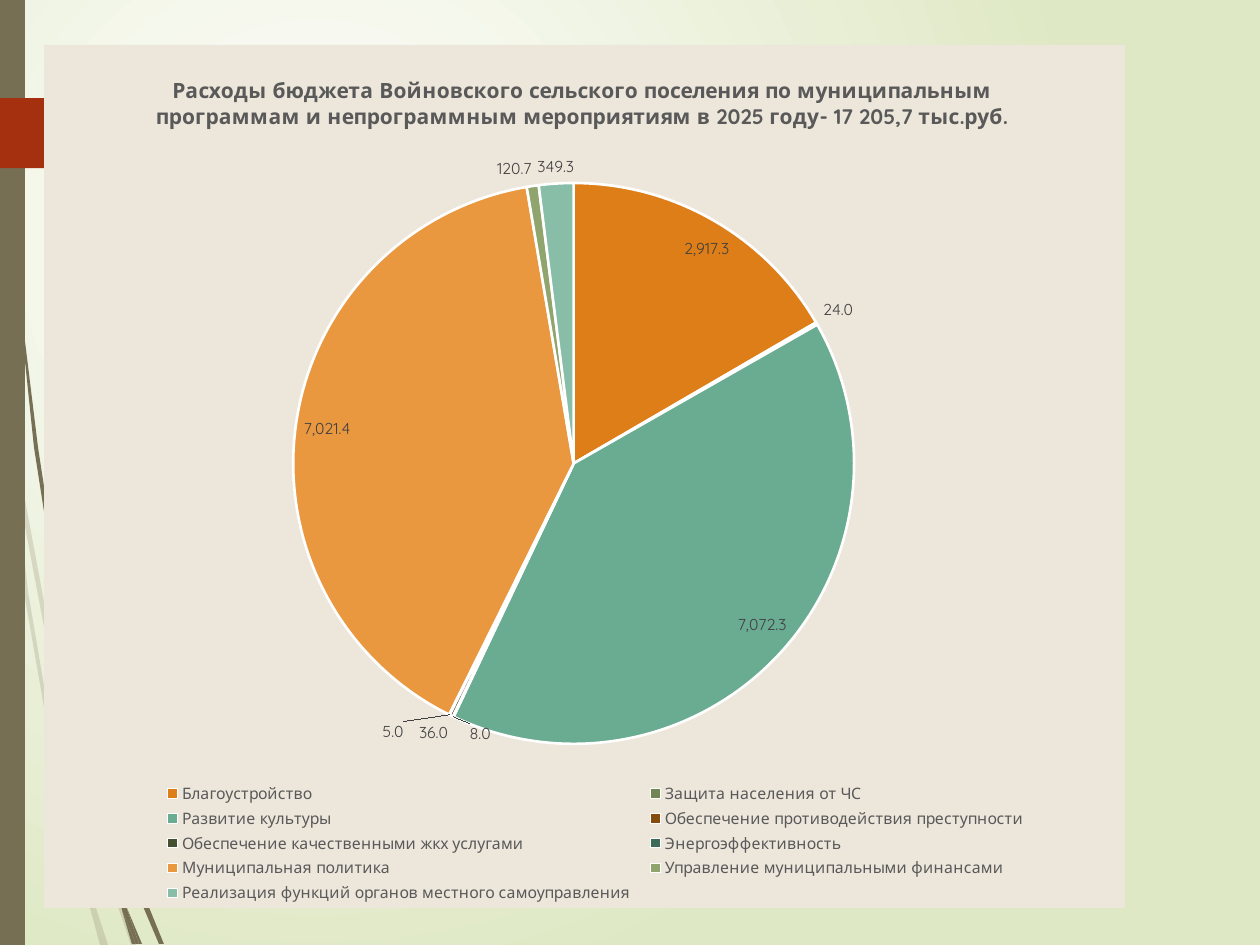
from typing import NamedTuple

import pptx
import pptx.chart.data
import pptx.dml.color
import pptx.enum.chart
import pptx.enum.shapes
import pptx.oxml
import pptx.oxml.ns
import pptx.util

EMU_PER_PX = 914400 // 126
SLIDE_WIDTH, SLIDE_HEIGHT = 1260, 945
FONT = "Quicksand"
BROWN, RED, BEIGE, GREY = "766F54", "A53010", "EDE6DB", "595959"
TITLE = ("Расходы бюджета Войновского сельского поселения по муниципальным "
         "программам и непрограммным мероприятиям в 2025 году- 17 205,7 тыс.руб.")


class Program(NamedTuple):
    name: str
    amount: float
    color: str


class Outline(NamedTuple):
    points: list[tuple[int, int]]
    color: str = BROWN
    opacity: int = 100


PROGRAMS = [
    Program("Благоустройство", 2917.3, "DE7E18"),
    Program("Защита населения от ЧС", 24, "728653"),
    Program("Развитие культуры", 7072.3, "6AAC91"),
    Program("Обеспечение противодействия преступности", 8, "854C0E"),
    Program("Обеспечение качественными жкх услугами", 36, "445032"),
    Program("Энергоэффективность", 5, "3C6B58"),
    Program("Муниципальная политика", 7021.4, "EA9840"),
    Program("Управление муниципальными финансами", 120.7, "90A56E"),
    Program("Реализация функций органов местного самоуправления", 349.3, "88BDA7"),
]

PALE_WISPS = [
    [(50, 658), (74, 755), (74, 738), (54, 655), (13, 435), (15, 474)],
    [(81, 765), (77, 751), (77, 769), (107, 874), (131, 945), (136, 945), (111, 872)],
    [(105, 945), (108, 945), (92, 896)],
    [(81, 861), (60, 780), (28, 591), (15, 474), (10, 441), (24, 592), (57, 782),
     (81, 873), (88, 900), (87, 891)],
    [(88, 900), (100, 945), (103, 945)],
    [(84, 872), (82, 861), (87, 891), (88, 900), (103, 945), (105, 945), (92, 896)],
]
DARK_WISPS = [
    [(6, 139), (18, 294), (34, 447), (58, 601), (59, 606), (57, 571), (38, 447),
     (19, 292), (8, 137), (5, 60), (4, 0), (3, 0), (4, 60)],
    [(118, 818), (115, 808), (115, 827), (137, 892), (159, 944), (164, 944), (142, 890)],
    [(139, 944), (142, 944), (126, 906)],
    [(122, 910), (132, 944), (136, 944)],
    [(121, 890), (115, 871), (121, 903), (122, 910), (136, 944), (139, 944), (126, 906)],
]
RIBBON = [(0, 98), (153, 98), (188, 133), (153, 168), (0, 168)]


def px(length: int) -> int:
    return pptx.util.Emu(length * EMU_PER_PX)


def rgb(color: str) -> pptx.dml.color.RGBColor:
    return pptx.dml.color.RGBColor.from_string(color)


def xml(text: str):
    """Parse an element whose first tag holds the place for namespaces as {ns}."""
    return pptx.oxml.parse_xml(text.replace("{ns}", pptx.oxml.ns.nsdecls("a", "c")))


def fill_shape(shape, color: str) -> None:
    shape.shadow.inherit = False
    shape.fill.solid()
    shape.fill.fore_color.rgb = rgb(color)
    shape.line.fill.background()


def style_font(font, size: float, color: str, bold: bool = False) -> None:
    font.name, font.size, font.bold = FONT, pptx.util.Pt(size), bold
    font.color.rgb = rgb(color)


def paint_background(slide) -> None:
    fill = slide.background.fill
    fill.gradient()
    for stop, color, position in zip(fill.gradient_stops, ("FFFFFF", "DFE8C4"), (0, 1)):
        stop.color.rgb = rgb(color)
        stop.position = position
    linear = slide.element.xpath("./p:cSld/p:bg//a:lin")[0]
    linear.getparent().replace(linear, xml(
        '<a:path {ns} path="circle"><a:fillToRect l="50000" t="50000" '
        'r="100000" b="100000"/></a:path>'))


def draw_outline(slide, outline: Outline) -> None:
    builder = slide.shapes.build_freeform(*outline.points[0], scale=EMU_PER_PX)
    builder.add_line_segments(outline.points[1:], close=True)
    shape = builder.convert_to_shape()
    fill_shape(shape, outline.color)
    if outline.opacity < 100:
        color = shape.element.xpath("./p:spPr/a:solidFill/a:srgbClr")[0]
        color.append(xml(f'<a:alpha {{ns}} val="{outline.opacity * 1000}"/>'))


def place_part(element, successors: tuple[str, ...], **fractions: float) -> None:
    """Fix a chart part at fractions of the chart area."""
    for old_layout in element.findall(pptx.oxml.ns.qn("c:layout")):
        element.remove(old_layout)
    modes = "".join(f'<c:{side}Mode val="edge"/>' for side in "xy")
    values = "".join(f'<c:{key} val="{value}"/>' for key, value in fractions.items())
    layout = xml(f"<c:layout {{ns}}><c:manualLayout>{modes}{values}"
                 "</c:manualLayout></c:layout>")
    element.insert_element_before(layout, *successors)


def style_pie(plot) -> None:
    plot.vary_by_categories = True
    for index, program in enumerate(PROGRAMS):
        point_format = plot.series[0].points[index].format
        point_format.fill.solid()
        point_format.fill.fore_color.rgb = rgb(program.color)
        point_format.line.color.rgb = rgb("FFFFFF")
        point_format.line.width = pptx.util.Pt(1.5)
    labels = plot.series[0].data_labels
    labels.show_value = True
    labels.number_format = "#,##0.0"
    labels.number_format_is_linked = False
    labels.position = pptx.enum.chart.XL_LABEL_POSITION.BEST_FIT
    style_font(labels.font, 9, "404040")


def add_budget_chart(slide) -> None:
    data = pptx.chart.data.CategoryChartData(number_format="#,##0.0")
    data.categories = [program.name for program in PROGRAMS]
    data.add_series("Series 1", [program.amount for program in PROGRAMS])
    chart = slide.shapes.add_chart(
        pptx.enum.chart.XL_CHART_TYPE.PIE, px(44), px(45), px(1081), px(863), data).chart
    style_font(chart.font, 10, "000000")

    chart.has_title = True
    run = chart.chart_title.text_frame.paragraphs[0].add_run()
    run.text = TITLE
    style_font(run.font, 12, GREY, bold=True)

    chart.has_legend = True
    chart.legend.position = pptx.enum.chart.XL_LEGEND_POSITION.BOTTOM
    chart.legend.include_in_layout = False
    style_font(chart.legend.font, 9, GREY)
    style_pie(chart.plots[0])

    chart_element = chart.element.find(pptx.oxml.ns.qn("c:chart"))
    place_part(chart_element.find(pptx.oxml.ns.qn("c:title")),
               ("c:overlay", "c:spPr", "c:txPr"), x=0.1, y=0.03)
    place_part(chart.legend._element, ("c:overlay", "c:spPr", "c:txPr"),
               x=0.1, y=0.85, w=0.82, h=0.15)
    plot_area = chart_element.find(pptx.oxml.ns.qn("c:plotArea"))
    place_part(plot_area, ("c:pieChart",), x=0.23, y=0.16, w=0.52, h=0.65)
    inner = xml('<c:layoutTarget {ns} val="inner"/>')
    plot_area.xpath("./c:layout/c:manualLayout")[0].insert(0, inner)
    chart_element.addnext(xml(
        f'<c:spPr {{ns}}><a:solidFill><a:srgbClr val="{BEIGE}"/></a:solidFill>'
        "<a:ln><a:noFill/></a:ln></c:spPr>"))


def main() -> None:
    presentation = pptx.Presentation()
    presentation.slide_width = px(SLIDE_WIDTH)
    presentation.slide_height = px(SLIDE_HEIGHT)
    slide = presentation.slides.add_slide(presentation.slide_layouts[6])
    paint_background(slide)
    for points in PALE_WISPS:
        draw_outline(slide, Outline(points, opacity=20))
    for points in DARK_WISPS:
        draw_outline(slide, Outline(points))
    side_bar = slide.shapes.add_shape(
        pptx.enum.shapes.MSO_SHAPE.RECTANGLE, 0, 0, px(25), px(SLIDE_HEIGHT))
    fill_shape(side_bar, BROWN)
    draw_outline(slide, Outline(RIBBON, RED))
    add_budget_chart(slide)
    presentation.save("out.pptx")


if __name__ == "__main__":
    main()
